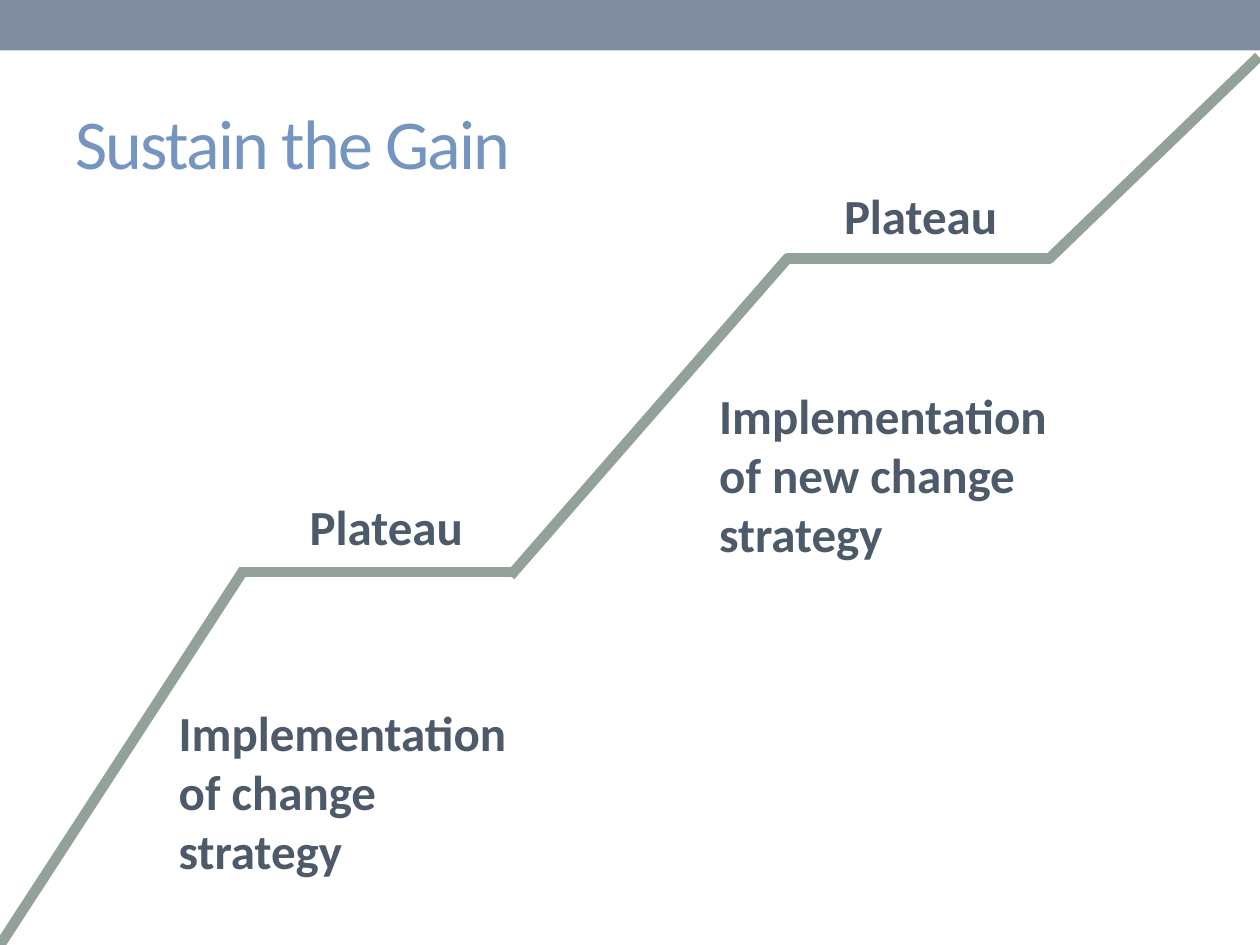
from dataclasses import dataclass

from lxml import etree
from pptx import Presentation
from pptx.dml.color import RGBColor
from pptx.enum.shapes import MSO_CONNECTOR, MSO_SHAPE
from pptx.enum.text import MSO_ANCHOR
from pptx.oxml.ns import qn
from pptx.slide import Slide
from pptx.util import Inches, Pt

STRAIGHT = MSO_CONNECTOR.STRAIGHT
RECTANGLE = MSO_SHAPE.RECTANGLE
TOP = MSO_ANCHOR.TOP
MIDDLE = MSO_ANCHOR.MIDDLE

WIDTH, HEIGHT = 10, 7.5
FONT = "Calibri"
COLORS = {
    "banner": "808DA0",
    "title": "7595C1",
    "label": "4C5A6A",
    "line": "93A299",
}


@dataclass(frozen=True)
class Label:
    text: str
    left: float
    top: float
    width: float
    height: float
    size: int = 28
    color: str = "label"
    bold: bool = True
    anchor: MSO_ANCHOR = TOP
    spacing: int = 0


@dataclass(frozen=True)
class Segment:
    start: tuple[float, float]
    end: tuple[float, float]


STRATEGY_SIZE = (3.02, 1.51)
PLATEAU_SIZE = (1.72, 0.57)

LABELS = [
    Label("Sustain the Gain", 0.5, 0.58, 9, 1.08, size=40, color="title",
          bold=False, anchor=MIDDLE, spacing=-100),
    Label("Implementation of change strategy", 1.32, 5.53, *STRATEGY_SIZE),
    Label("Plateau", 6.6, 1.42, *PLATEAU_SIZE),
    Label("Plateau", 2.36, 3.89, *PLATEAU_SIZE),
    Label("Implementation of new change strategy", 5.61, 3.01, *STRATEGY_SIZE),
]

SEGMENTS = [
    Segment((0, HEIGHT), (1.93, 4.53)),
    Segment((1.9, 4.54), (4.08, 4.54)),
    Segment((4.05, 4.57), (6.26, 2.04)),
    Segment((6.24, 2.05), (8.34, 2.05)),
    Segment((8.32, 2.06), (9.99, 0.45)),
]


def color_of(name: str) -> RGBColor:
    return RGBColor.from_string(COLORS[name])


def draw_banner(slide: Slide) -> None:
    shape = slide.shapes.add_shape(RECTANGLE, 0, 0, Inches(WIDTH), Inches(0.4))
    shape.shadow.inherit = False
    shape.fill.solid()
    shape.fill.fore_color.rgb = color_of("banner")
    shape.line.fill.background()


def draw_segment(slide: Slide, segment: Segment) -> None:
    points = [Inches(value) for value in (*segment.start, *segment.end)]
    connector = slide.shapes.add_connector(STRAIGHT, *points)
    connector.line.color.rgb = color_of("line")
    connector.line.width = Pt(6)
    etree.SubElement(connector.element.spPr, qn("a:effectLst"))


def draw_label(slide: Slide, label: Label) -> None:
    box = [Inches(value) for value in
           (label.left, label.top, label.width, label.height)]
    text_frame = slide.shapes.add_textbox(*box).text_frame
    text_frame.word_wrap = True
    text_frame.vertical_anchor = label.anchor
    text_frame.text = label.text
    run = text_frame.paragraphs[0].runs[0]
    run.font.name = FONT
    run.font.size = Pt(label.size)
    run.font.bold = label.bold
    run.font.color.rgb = color_of(label.color)
    if label.spacing:
        run.font._element.set("spc", str(label.spacing))


def main() -> None:
    presentation = Presentation()
    presentation.slide_width = Inches(WIDTH)
    presentation.slide_height = Inches(HEIGHT)
    slide = presentation.slides.add_slide(presentation.slide_layouts[6])
    draw_banner(slide)
    for segment in SEGMENTS:
        draw_segment(slide, segment)
    for label in LABELS:
        draw_label(slide, label)
    presentation.save("out.pptx")


if __name__ == "__main__":
    main()
